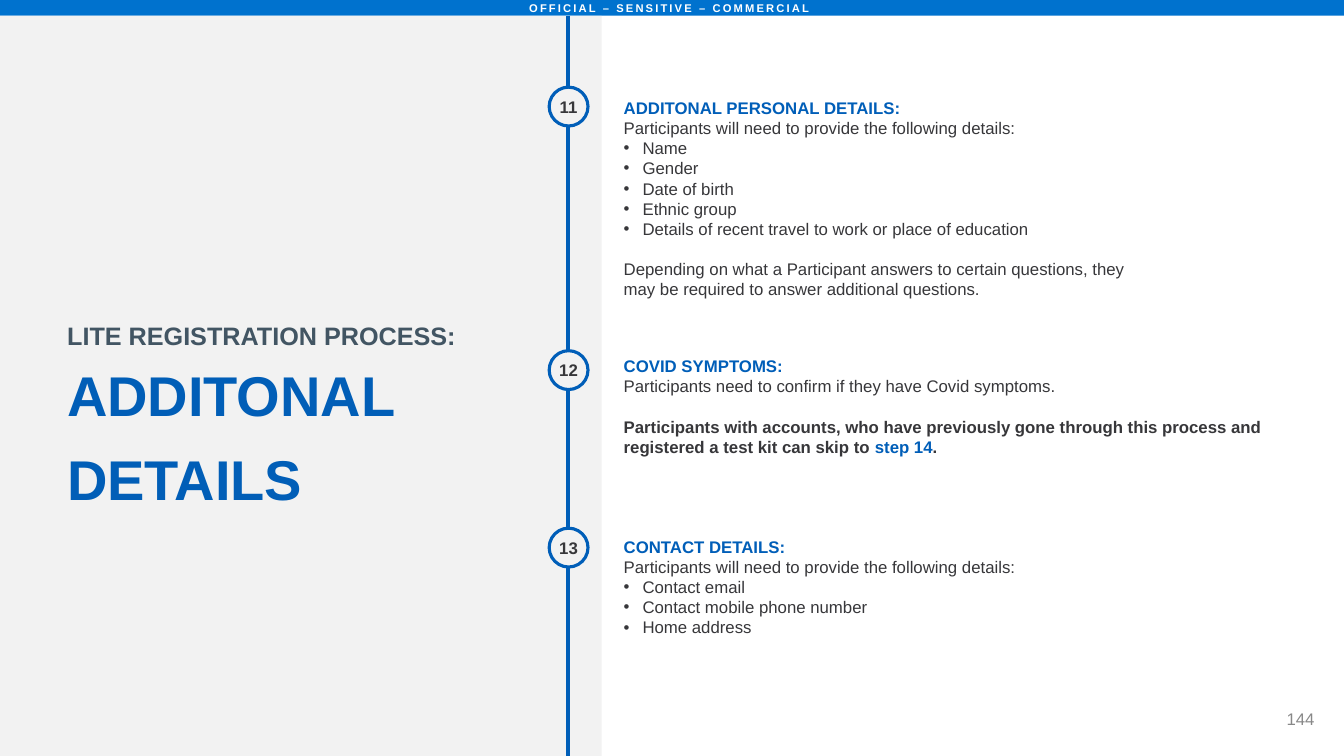
from dataclasses import dataclass

from lxml import etree
from pptx import Presentation
from pptx.dml.color import RGBColor
from pptx.enum.shapes import MSO_CONNECTOR, MSO_SHAPE
from pptx.enum.text import MSO_ANCHOR, MSO_AUTO_SIZE, PP_ALIGN
from pptx.oxml.ns import qn
from pptx.util import Emu, Pt

RECTANGLE, OVAL = MSO_SHAPE.RECTANGLE, MSO_SHAPE.OVAL
STRAIGHT = MSO_CONNECTOR.STRAIGHT
TOP, MIDDLE = MSO_ANCHOR.TOP, MSO_ANCHOR.MIDDLE
LEFT, CENTER, RIGHT = PP_ALIGN.LEFT, PP_ALIGN.CENTER, PP_ALIGN.RIGHT
NO_FIT = MSO_AUTO_SIZE.NONE


@dataclass(frozen=True)
class Theme:
    font: str = "Arial"
    banner: str = "0072CE"
    panel: str = "F2F2F2"
    title: str = "015EB7"
    accent: str = "005EB8"
    body: str = "37373A"
    kicker: str = "425563"
    muted: str = "888888"
    white: str = "FFFFFF"
    title_size: int = 40
    kicker_size: int = 18
    body_size: int = 12
    banner_size: int = 8
    title_leading: int = 60
    body_leading: float = 14.4
    line_width: float = 2.25


THEME = Theme()

# Content: each step paragraph is (style, text)
BANNER = "OFFICIAL – SENSITIVE – COMMERCIAL"
KICKER = "LITE REGISTRATION PROCESS:"
TITLE = "ADDITONAL DETAILS"
PAGE_NUMBER = "144"
DETAILS_INTRO = "Participants will need to provide the following details:"
STEPS = [
    {"number": "11", "circle_top": 83, "box": (594, 88, 520, 200), "paragraphs": [
        ("heading", "ADDITONAL PERSONAL DETAILS:"),
        ("plain", DETAILS_INTRO),
        ("bullet", "Name"),
        ("bullet", "Gender"),
        ("bullet", "Date of birth"),
        ("bullet", "Ethnic group"),
        ("bullet", "Details of recent travel to work or place of education"),
        ("spaced", "Depending on what a Participant answers to certain questions, "
                   "they may be required to answer additional questions."),
    ]},
    {"number": "12", "circle_top": 334, "box": (594, 334, 619, 126), "paragraphs": [
        ("heading", "COVID SYMPTOMS:"),
        ("plain", "Participants need to confirm if they have Covid symptoms."),
        ("strong", "Participants with accounts, who have previously gone through "
                   "this process and registered a test kit can skip to |step 14|."),
    ]},
    {"number": "13", "circle_top": 503, "box": (594, 506, 408, 126), "paragraphs": [
        ("heading", "CONTACT DETAILS:"),
        ("plain", DETAILS_INTRO),
        ("bullet", "Contact email"),
        ("bullet", "Contact mobile phone number"),
        ("bullet", "Home address"),
    ]},
]

# Layout in px, 96 to the inch
SLIDE_WIDTH, SLIDE_HEIGHT = 1280, 720
BANNER_HEIGHT = 15
PANEL_WIDTH = 573
TIMELINE_X = 541
CIRCLE_SIZE = 37
BULLET_INDENT = 18


def px(length):
    return Emu(length * 9525)


def color(value):
    return RGBColor.from_string(value)


def place(shape, box):
    shape.left, shape.top, shape.width, shape.height = map(px, box)


def set_frame(shape, insets=(0, 0, 0, 0), anchor=MIDDLE):
    frame = shape.text_frame
    frame.word_wrap = True
    frame.auto_size = NO_FIT
    frame.vertical_anchor = anchor
    (frame.margin_left, frame.margin_top,
     frame.margin_right, frame.margin_bottom) = map(px, insets)
    return frame


def style_run(run, size, tint, bold):
    font = run.font
    font.name, font.size, font.bold = THEME.font, Pt(size), bold
    font.color.rgb = color(tint)


def write_line(frame, text, size, tint, bold=True, align=CENTER):
    frame.text = text
    paragraph = frame.paragraphs[0]
    paragraph.alignment = align
    style_run(paragraph.runs[0], size, tint, bold)
    return paragraph


def set_bullet(paragraph, bulleted):
    properties = paragraph._p.get_or_add_pPr()
    indent = px(BULLET_INDENT) if bulleted else 0
    properties.set("marL", str(indent))
    properties.set("indent", str(-indent))
    if bulleted:
        etree.SubElement(properties, qn("a:buChar")).set("char", "•")
    else:
        etree.SubElement(properties, qn("a:buNone"))


def add_filled(slide, kind, box, fill, outline=None):
    shape = slide.shapes.add_shape(kind, *map(px, box))
    shape.shadow.inherit = False
    shape.fill.solid()
    shape.fill.fore_color.rgb = color(fill)
    if outline:
        shape.line.color.rgb = color(outline)
        shape.line.width = Pt(THEME.line_width)
    else:
        shape.line.fill.background()
    return shape


def write_step(placeholder, step):
    place(placeholder, step["box"])
    frame = set_frame(placeholder, (0, 5, 10, 5), TOP)
    for index, (style, text) in enumerate(step["paragraphs"]):
        paragraph = frame.paragraphs[0] if index == 0 else frame.add_paragraph()
        set_bullet(paragraph, style == "bullet")
        paragraph.line_spacing = Pt(THEME.body_leading)
        gap = THEME.body_leading if style in ("spaced", "strong") else 0
        paragraph.space_before = Pt(gap)
        # Parts between bars are accented
        for part_index, part in enumerate(text.split("|")):
            run = paragraph.add_run()
            run.text = part
            accented = style == "heading" or part_index % 2 == 1
            style_run(run, THEME.body_size, THEME.accent if accented else THEME.body,
                      style in ("heading", "strong"))


def main():
    presentation = Presentation()
    presentation.slide_width, presentation.slide_height = px(SLIDE_WIDTH), px(SLIDE_HEIGHT)
    slide = presentation.slides.add_slide(presentation.slide_layouts.get_by_name("Comparison"))
    kicker, *step_bodies = [item for item in slide.placeholders
                            if item.placeholder_format.idx in (1, 2, 3, 4)]

    # Banner and side panel, behind the text
    banner = add_filled(slide, RECTANGLE, (0, 0, SLIDE_WIDTH, BANNER_HEIGHT), THEME.banner)
    line = write_line(set_frame(banner, (0, 0, 5, 0)), BANNER, THEME.banner_size, THEME.white)
    line.runs[0].font._element.set("spc", "150")
    panel = add_filled(slide, RECTANGLE, (0, BANNER_HEIGHT, PANEL_WIDTH,
                                          SLIDE_HEIGHT - BANNER_HEIGHT), THEME.panel)
    for backdrop in (panel, banner):
        slide.shapes._spTree.insert(2, backdrop._element)

    # Title and the line above it
    title = slide.shapes.title
    place(title, (0, 0, PANEL_WIDTH, SLIDE_HEIGHT))
    line = write_line(set_frame(title, (64, 109, 37, 14)), TITLE,
                      THEME.title_size, THEME.title, align=LEFT)
    line.line_spacing = Pt(THEME.title_leading)
    place(kicker, (64, 286, 406, 48))
    line = write_line(set_frame(kicker, (0, 5, 0, 5), TOP), KICKER,
                      THEME.kicker_size, THEME.kicker, align=LEFT)
    set_bullet(line, False)
    line.space_before = Pt(0)
    line.line_spacing = 1.5

    # Timeline with numbered steps
    timeline = slide.shapes.add_connector(STRAIGHT, px(TIMELINE_X), px(BANNER_HEIGHT),
                                          px(TIMELINE_X), px(SLIDE_HEIGHT))
    timeline.line.color.rgb = color(THEME.accent)
    timeline.line.width = Pt(THEME.line_width)
    etree.SubElement(timeline._element.spPr, qn("a:effectLst"))
    for step, body in zip(STEPS, step_bodies):
        write_step(body, step)
        circle = add_filled(slide, OVAL, (TIMELINE_X - CIRCLE_SIZE // 2, step["circle_top"],
                                          CIRCLE_SIZE, CIRCLE_SIZE), THEME.panel, THEME.accent)
        write_line(set_frame(circle), step["number"], THEME.body_size, THEME.body)

    # Page number
    number = slide.shapes.add_textbox(*map(px, (1160, 649, 102, 71)))
    write_line(set_frame(number, (10, 4, 10, 4)), PAGE_NUMBER, THEME.body_size,
               THEME.muted, bold=False, align=RIGHT)
    presentation.save("out.pptx")


if __name__ == "__main__":
    main()
